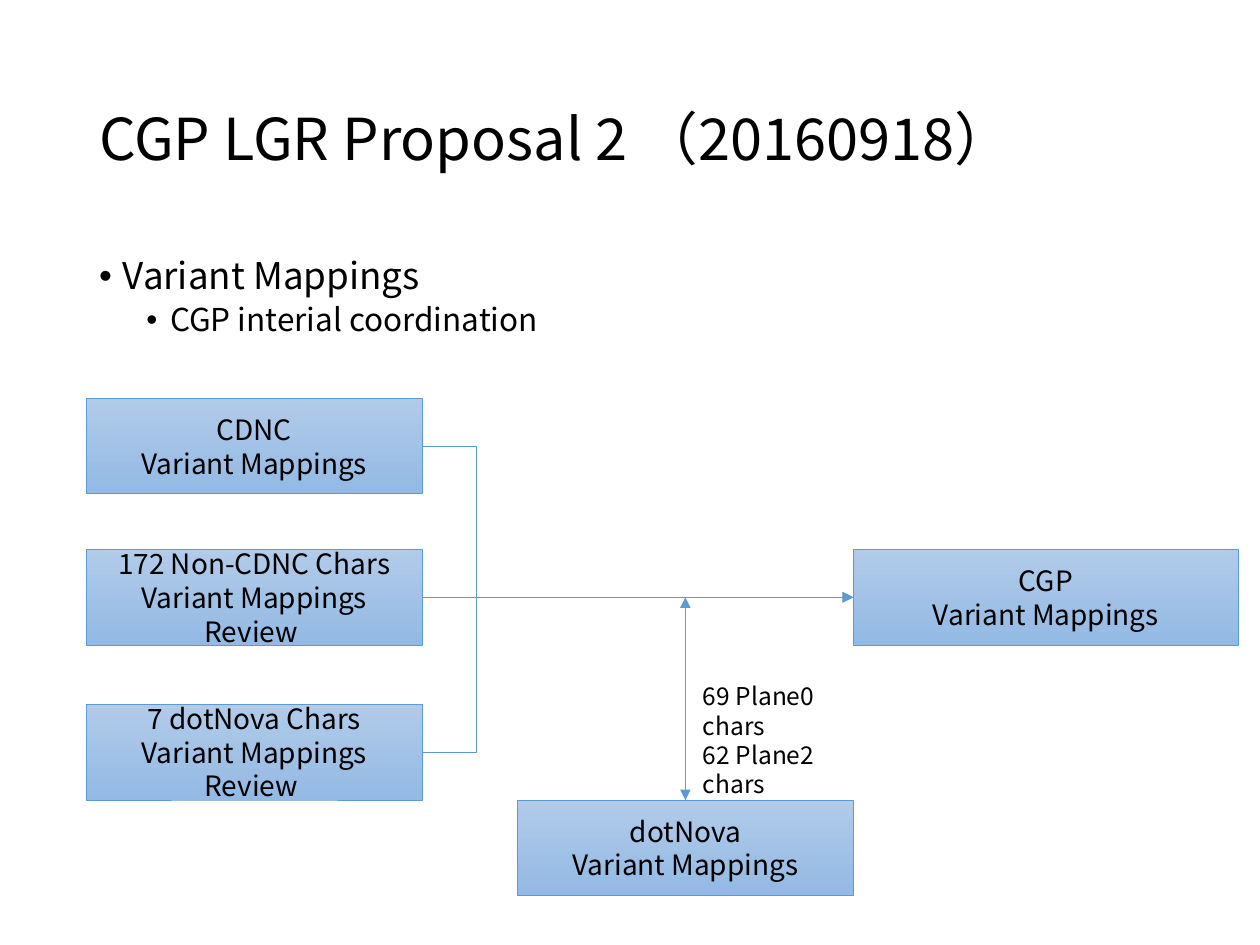
from lxml import etree
from pptx import Presentation
from pptx.dml.color import RGBColor
from pptx.enum.shapes import MSO_CONNECTOR, MSO_SHAPE
from pptx.enum.text import MSO_ANCHOR, MSO_AUTO_SIZE, PP_ALIGN
from pptx.oxml.ns import qn
from pptx.util import Pt

RECTANGLE = MSO_SHAPE.RECTANGLE
STRAIGHT, ELBOW = MSO_CONNECTOR.STRAIGHT, MSO_CONNECTOR.ELBOW
MIDDLE, TOP = MSO_ANCHOR.MIDDLE, MSO_ANCHOR.TOP
LEFT_ALIGN, CENTER = PP_ALIGN.LEFT, PP_ALIGN.CENTER
NO_AUTOFIT = MSO_AUTO_SIZE.NONE

FONT = "Noto Sans CJK SC"
BLACK = RGBColor(0x00, 0x00, 0x00)
BLUE = RGBColor(0x5B, 0x9B, 0xD5)
GRADIENT = (RGBColor(0xB1, 0xCB, 0xE9), RGBColor(0x93, 0xB9, 0xE4))

TITLE = "CGP LGR Proposal 2 （20160918）"
# text, size, space before, left indent
BULLETS = [
    ("Variant Mappings", 21, 7.5, 13.5),
    ("CGP interial coordination", 18, 3.8, 40.5),
]
HANGING = 13.5
NOTE = "69 Plane0 chars\n62 Plane2 chars"

MARGIN, CONTENT_WIDTH = 49.5, 621
BOX_WIDTH, BOX_HEIGHT = 191.7, 54.7
RESULT_LEFT = 487.5
MIDDLE_ROW = 314
# name: text, left, top, width
BOXES = {
    "non_cdnc": ("172 Non-CDNC Chars\nVariant Mappings Review ", MARGIN, MIDDLE_ROW, BOX_WIDTH),
    "chars": ("7 dotNova Chars\vVariant Mappings Review ", MARGIN, 402.5, BOX_WIDTH),
    "cdnc": ("CDNC\nVariant Mappings", MARGIN, 227.6, BOX_WIDTH),
    "cgp": ("CGP\nVariant Mappings", RESULT_LEFT, MIDDLE_ROW, 220.3),
    "registry": ("dotNova\vVariant Mappings", RESULT_LEFT - BOX_WIDTH, 457.2, BOX_WIDTH),
}
SOURCES = [("cdnc", ELBOW), ("chars", ELBOW), ("non_cdnc", STRAIGHT)]
ELBOW_POSITION = 12700  # thousandths of a percent of the connector width
TOP_SITE, LEFT_SITE, RIGHT_SITE = 0, 1, 3


def place(shape, left, top, width, height):
    shape.left, shape.top = Pt(left), Pt(top)
    shape.width, shape.height = Pt(width), Pt(height)


def format_paragraph(paragraph, size, align):
    paragraph.alignment = align
    for span in paragraph.runs:
        font = span.font
        font.name, font.size, font.color.rgb = FONT, Pt(size), BLACK
        etree.SubElement(span._r.get_or_add_rPr(), qn("a:ea"), typeface=FONT)


def fill_text(shape, text, size, align, anchor):
    frame = shape.text_frame
    frame.text = text
    frame.word_wrap = True
    frame.auto_size = NO_AUTOFIT
    frame.vertical_anchor = anchor
    for paragraph in frame.paragraphs:
        format_paragraph(paragraph, size, align)
    return frame


def add_box(page, text, left, top, width):
    box = page.shapes.add_shape(RECTANGLE, Pt(left), Pt(top), Pt(width), Pt(BOX_HEIGHT))
    box.shadow.inherit = False
    box.fill.gradient()
    box.fill.gradient_angle = 270
    for stop, color in zip(box.fill.gradient_stops, GRADIENT):
        stop.color.rgb = color
    box.line.color.rgb, box.line.width = BLUE, Pt(0.5)
    fill_text(box, text, 16, CENTER, MIDDLE)
    return box


def add_arrow(page, kind, start=(0, 0), end=(0, 0), ends=("tailEnd",)):
    arrow = page.shapes.add_connector(kind, *(Pt(value) for value in (*start, *end)))
    arrow.line.color.rgb, arrow.line.width = BLUE, Pt(0.5)
    line = arrow.line._get_or_add_ln()
    for name in ends:
        etree.SubElement(line, qn(f"a:{name}"), type="triangle")
    properties = arrow._element.spPr
    etree.SubElement(properties, qn("a:effectLst"))
    if kind == ELBOW:
        guides = properties.find(qn("a:prstGeom")).get_or_add_avLst()
        etree.SubElement(guides, qn("a:gd"), name="adj1", fmla=f"val {ELBOW_POSITION}")
    return arrow


def main():
    deck = Presentation()
    deck.slide_width, deck.slide_height = Pt(720), Pt(540)
    page = deck.slides.add_slide(deck.slide_layouts.get_by_name("Title and Content"))

    title, body = page.shapes.title, page.placeholders[1]
    place(title, MARGIN, 28.75, CONTENT_WIDTH, 104.4)
    fill_text(title, TITLE, 33, LEFT_ALIGN, MIDDLE).paragraphs[0].line_spacing = 0.9

    place(body, MARGIN, 143.75, CONTENT_WIDTH, 342.6)
    frame = fill_text(body, "\n".join(text for text, *_ in BULLETS), 18, LEFT_ALIGN, TOP)
    for level, (paragraph, bullet) in enumerate(zip(frame.paragraphs, BULLETS)):
        _, size, before, indent = bullet
        paragraph.level = level
        paragraph.line_spacing = 0.9
        paragraph.space_before = Pt(before)
        paragraph.runs[0].font.size = Pt(size)
        properties = paragraph._p.get_or_add_pPr()
        properties.set("marL", str(Pt(indent)))
        properties.set("indent", str(-Pt(HANGING)))
        etree.SubElement(properties, qn("a:buFont"), typeface="Arial")
        etree.SubElement(properties, qn("a:buChar"), char="•")

    boxes = {name: add_box(page, *details) for name, details in BOXES.items()}
    for name, kind in SOURCES:
        arrow = add_arrow(page, kind)
        arrow.begin_connect(boxes[name], RIGHT_SITE)
        arrow.end_connect(boxes["cgp"], LEFT_SITE)

    _, left, top, width = BOXES["registry"]
    center = left + width / 2
    exchange = add_arrow(page, STRAIGHT, (center, MIDDLE_ROW + BOX_HEIGHT / 2),
                         (center, top), ("headEnd", "tailEnd"))
    exchange.end_connect(boxes["registry"], TOP_SITE)

    note = page.shapes.add_textbox(Pt(394.6), Pt(385.7), Pt(110), Pt(41))
    fill_text(note, NOTE, 14, LEFT_ALIGN, TOP)

    deck.save("out.pptx")


if __name__ == "__main__":
    main()
